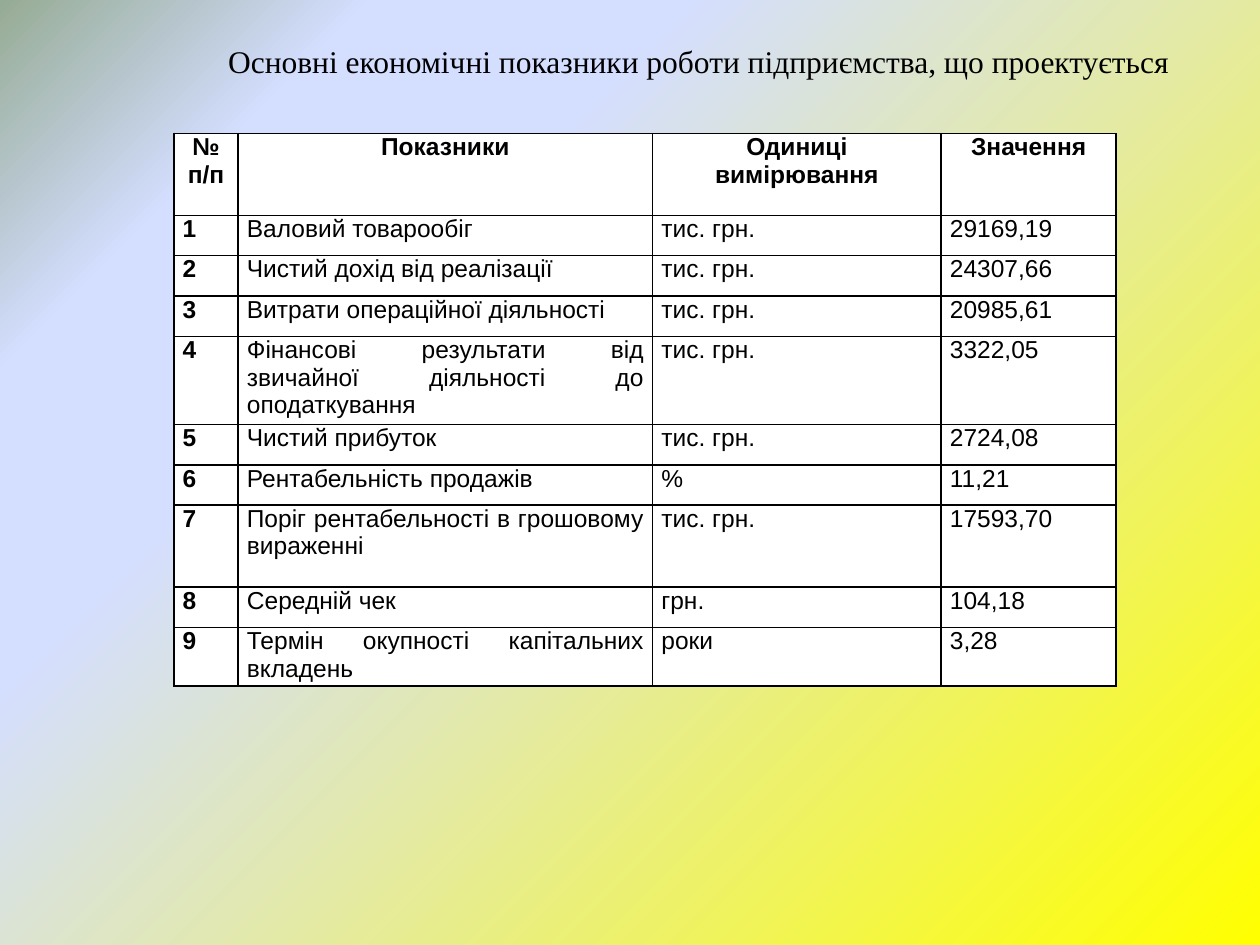
from lxml import etree
from pptx import Presentation
from pptx.dml.color import RGBColor
from pptx.enum.text import MSO_ANCHOR, MSO_AUTO_SIZE, PP_ALIGN
from pptx.oxml import parse_xml
from pptx.oxml.ns import nsdecls, qn
from pptx.util import Inches, Pt

TOP = MSO_ANCHOR.TOP
FIT_SHAPE = MSO_AUTO_SIZE.SHAPE_TO_FIT_TEXT
LEFT, CENTER, JUSTIFY = PP_ALIGN.LEFT, PP_ALIGN.CENTER, PP_ALIGN.JUSTIFY
BLACK = RGBColor(0x00, 0x00, 0x00)
WHITE = RGBColor(0xFF, 0xFF, 0xFF)
YELLOW = RGBColor(0xFF, 0xFF, 0x00)
LAVENDER = RGBColor(0xD4, 0xDE, 0xFF)
SAGE = RGBColor(0x96, 0xAB, 0x94)

GRADIENT_STOPS = [(0, YELLOW), (69, LAVENDER), (83, LAVENDER), (100, SAGE)]
TITLE = "Основні економічні показники роботи підприємства, що проектується"
HEADERS = ["№ п/п", "Показники", "Одиниці вимірювання", "Значення"]
INDICATORS = [
    ("Валовий товарообіг", "тис. грн.", "29169,19"),
    ("Чистий дохід від реалізації", "тис. грн.", "24307,66"),
    ("Витрати операційної діяльності", "тис. грн.", "20985,61"),
    ("Фінансові результати від звичайної діяльності до оподаткування", "тис. грн.", "3322,05"),
    ("Чистий прибуток", "тис. грн.", "2724,08"),
    ("Рентабельність продажів", "%", "11,21"),
    ("Поріг рентабельності в грошовому вираженні", "тис. грн.", "17593,70"),
    ("Середній чек", "грн.", "104,18"),
    ("Термін окупності капітальних вкладень", "роки", "3,28"),
]
COLUMN_WIDTHS = [0.51, 3.29, 2.29, 1.39]
ROW_HEIGHT, TALL_ROW_HEIGHT = 0.32, 0.65
TALL_ROWS = {0, 4, 7}


def set_background(slide):
    """Fill the slide with a gradient centred on the lower right corner."""
    slide.background.fill.solid()
    stops = "".join(
        f'<a:gs pos="{position * 1000}"><a:srgbClr val="{color}"/></a:gs>'
        for position, color in GRADIENT_STOPS
    )
    gradient = parse_xml(
        f'<a:gradFill {nsdecls("a")} rotWithShape="1"><a:gsLst>{stops}</a:gsLst>'
        '<a:path path="circle"><a:fillToRect l="100000" t="100000"/></a:path>'
        '<a:tileRect r="-100000" b="-100000"/></a:gradFill>'
    )
    properties = slide.element.find(".//" + qn("p:bgPr"))
    properties.replace(properties.find(qn("a:solidFill")), gradient)


def format_paragraph(paragraph, font_name, size, alignment, bold=False):
    """Apply alignment, spacing and font to a paragraph."""
    paragraph.alignment = alignment
    paragraph.space_before = Pt(0)
    paragraph.space_after = Pt(8)
    for run in paragraph.runs:
        run.font.name = font_name
        run.font.size = Pt(size)
        run.font.bold = bold
        run.font.color.rgb = BLACK


def set_title(slide):
    """Place and format the slide title."""
    title = slide.shapes.title
    title.left, title.top = Inches(1.22), Inches(0.13)
    title.width, title.height = Inches(8.27), Inches(0.51)
    text_frame = title.text_frame
    text_frame.text = TITLE
    text_frame.word_wrap = True
    text_frame.vertical_anchor = TOP
    text_frame.auto_size = FIT_SHAPE
    paragraph = text_frame.paragraphs[0]
    format_paragraph(paragraph, "Times New Roman", 18, JUSTIFY)
    paragraph.line_spacing = 1.5
    paragraph_properties = paragraph._p.get_or_add_pPr()
    paragraph_properties.set("marL", "0")
    paragraph_properties.set("indent", str(Inches(0.49)))


def set_borders(cell):
    """Draw a thin black line on every side of a cell."""
    properties = cell._tc.get_or_add_tcPr()
    for index, side in enumerate(("lnL", "lnR", "lnT", "lnB")):
        line = etree.Element(qn(f"a:{side}"), w=str(Pt(1)))
        fill = etree.SubElement(line, qn("a:solidFill"))
        etree.SubElement(fill, qn("a:srgbClr"), val=str(BLACK))
        properties.insert(index, line)


def fill_cell(cell, text, alignment, bold):
    """Write and format one table cell."""
    cell.margin_left = cell.margin_right = Inches(0.07)
    cell.margin_top = cell.margin_bottom = Inches(0)
    cell.vertical_anchor = TOP
    cell.fill.solid()
    cell.fill.fore_color.rgb = WHITE
    set_borders(cell)
    cell.text_frame.text = text
    format_paragraph(cell.text_frame.paragraphs[0], "Arial", 14, alignment, bold)


def add_indicator_table(slide):
    """Add the table of economic indicators."""
    rows = [HEADERS] + [
        (str(number), *indicator) for number, indicator in enumerate(INDICATORS, 1)
    ]
    heights = [
        TALL_ROW_HEIGHT if index in TALL_ROWS else ROW_HEIGHT for index in range(len(rows))
    ]
    table = slide.shapes.add_table(
        len(rows), len(HEADERS), Inches(1.38), Inches(1.06),
        Inches(sum(COLUMN_WIDTHS)), Inches(sum(heights)),
    ).table
    table.first_row = table.horz_banding = False
    for column, width in zip(table.columns, COLUMN_WIDTHS):
        column.width = Inches(width)
    body_alignments = [JUSTIFY, JUSTIFY, JUSTIFY, LEFT]
    for row_index, texts in enumerate(rows):
        table.rows[row_index].height = Inches(heights[row_index])
        is_header = row_index == 0
        for column_index, text in enumerate(texts):
            alignment = CENTER if is_header else body_alignments[column_index]
            bold = is_header or column_index == 0
            fill_cell(table.cell(row_index, column_index), text, alignment, bold)


def main():
    """Build and save the presentation."""
    presentation = Presentation()
    presentation.slide_width, presentation.slide_height = Inches(10), Inches(7.5)
    slide = presentation.slides.add_slide(presentation.slide_layouts[5])
    set_background(slide)
    set_title(slide)
    add_indicator_table(slide)
    presentation.save("out.pptx")


if __name__ == "__main__":
    main()
